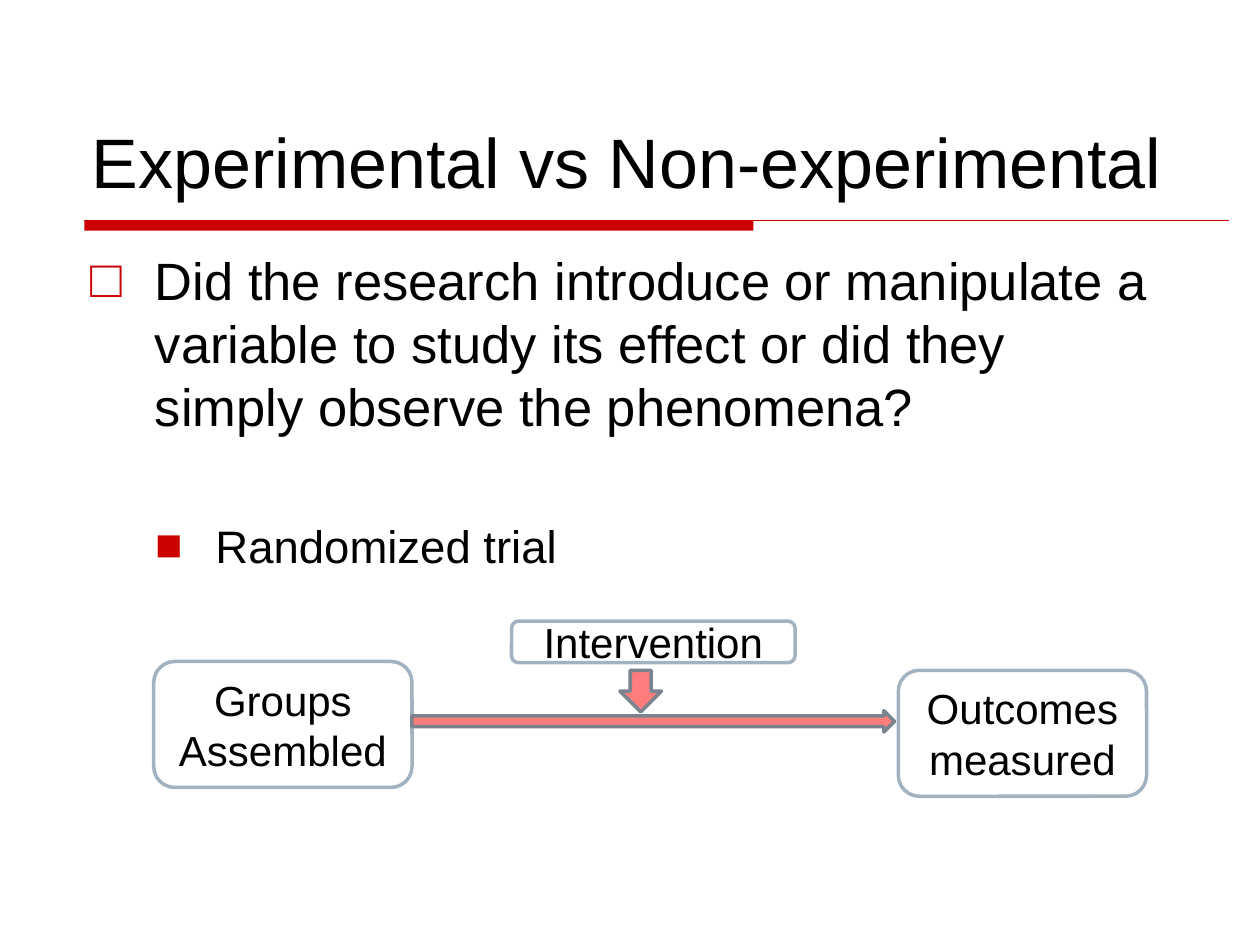
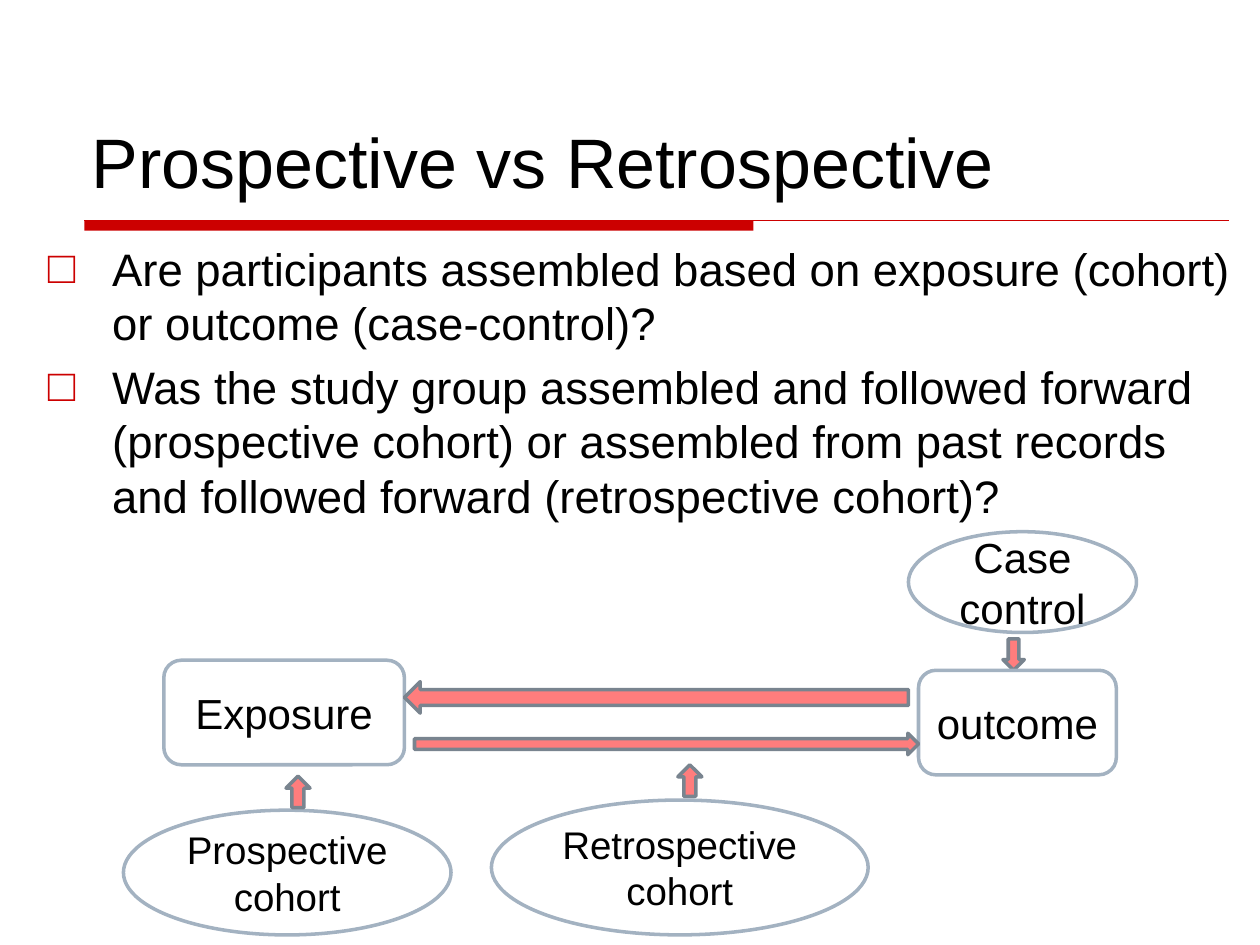
from lxml import etree
from pptx import Presentation, util as u
from pptx.dml.color import RGBColor
from pptx.enum import shapes, text
from pptx.oxml import ns

COLOURS = {
    "ink": "000000",
    "paper": "FFFFFF",
    "accent": "CC0000",
    "box line": "A3B2C1",
    "arrow": "FF7D7D",
    "arrow line": "79848F",
}
FONT = "Arial"
BULLETS = [("□", 0.51, 0.51), ("■", 0.99, 0.48)]
SHAPE = shapes.MSO_SHAPE


def colour(name):
    return RGBColor.from_string(COLOURS[name])


class StudyDeck:
    """Holds the deck's style and its current slide."""

    def __init__(self):
        self.deck = Presentation()
        self.deck.slide_width = u.Inches(10)
        self.deck.slide_height = u.Inches(7.5)
        self.page = None

    def new_page(self, title):
        self.page = self.deck.slides.add_slide(self.deck.slide_layouts[1])
        self.title_rule()
        box = self.page.shapes.title
        self.place(box, 0.63, 0.33, 8.75, 1.33)
        frame = box.text_frame
        frame.auto_size = text.MSO_AUTO_SIZE.NONE
        frame.vertical_anchor = text.MSO_ANCHOR.BOTTOM
        para = frame.paragraphs[0]
        para.alignment = text.PP_ALIGN.LEFT
        self.add_span(para, title, 40)

    def place(self, box, left, top, width, height):
        box.left, box.top = u.Inches(left), u.Inches(top)
        box.width, box.height = u.Inches(width), u.Inches(height)

    def add_span(self, para, words, size):
        span = para.add_run()
        span.text = words
        span.font.name = FONT
        span.font.size = u.Pt(size)
        span.font.color.rgb = colour("ink")

    def title_rule(self):
        line = self.page.shapes.add_connector(
            shapes.MSO_CONNECTOR.STRAIGHT,
            u.Inches(0.67), u.Inches(1.75), u.Inches(9.75), u.Inches(1.75))
        line.line.color.rgb = colour("accent")
        line.line.width = u.Pt(0.75)
        etree.SubElement(line._element.spPr, ns.qn("a:effectLst"))
        bar = self.shape(SHAPE.RECTANGLE, (0.67, 1.75, 5.31, 0.08), "accent")
        bar.line.fill.background()

    def bullet_list(self, area, items):
        box = self.page.placeholders[1]
        self.place(box, *area)
        frame = box.text_frame
        frame.auto_size = text.MSO_AUTO_SIZE.NONE
        for index, (level, words, size, gap) in enumerate(items):
            para = frame.add_paragraph() if index else frame.paragraphs[0]
            para.level = level
            para.space_before = u.Pt(gap)
            self.bullet(para, level)
            self.add_span(para, words, size)

    def bullet(self, para, level):
        mark, margin, hanging = BULLETS[level]
        properties = para._p.get_or_add_pPr()
        properties.set("marL", str(u.Inches(margin)))
        properties.set("indent", str(-u.Inches(hanging)))
        tint = etree.SubElement(properties, ns.qn("a:buClr"))
        etree.SubElement(tint, ns.qn("a:srgbClr"), val=COLOURS["accent"])
        etree.SubElement(properties, ns.qn("a:buFont"), typeface=FONT)
        etree.SubElement(properties, ns.qn("a:buChar"), char=mark)

    def shape(self, kind, area, fill, line=None):
        box = self.page.shapes.add_shape(kind, *map(u.Inches, area))
        box.shadow.inherit = False
        box.fill.solid()
        box.fill.fore_color.rgb = colour(fill)
        if line:
            box.line.color.rgb = colour(line)
            box.line.width = u.Pt(2)
        return box

    def label(self, words, area, kind=SHAPE.ROUNDED_RECTANGLE, size=24):
        box = self.shape(kind, area, "paper", "box line")
        frame = box.text_frame
        frame.word_wrap = True
        frame.vertical_anchor = text.MSO_ANCHOR.MIDDLE
        para = frame.paragraphs[0]
        para.alignment = text.PP_ALIGN.CENTER
        self.add_span(para, words, size)

    def arrow(self, kind, area, rotation=0):
        self.shape(kind, area, "arrow", "arrow line").rotation = rotation


def experimental_page(study):
    study.new_page("Experimental vs Non-experimental")
    study.bullet_list((0.62, 1.92, 8.75, 4.67), [
        (0, "Did the research introduce or manipulate a variable to study its "
            "effect or did they simply observe the phenomena?", 30, 0),
        (1, "Randomized trial", 26, 46),
    ])
    study.label("Groups Assembled", (1.22, 5.25, 2.05, 1))
    study.label("Outcomes measured", (7.13, 5.32, 1.97, 1))
    study.arrow(SHAPE.RIGHT_ARROW, (3.27, 5.64, 3.83, 0.17))
    study.arrow(SHAPE.DOWN_ARROW, (4.92, 5.32, 0.33, 0.33))
    study.label("Intervention", (4.06, 4.93, 2.25, 0.33))


def prospective_page(study):
    study.new_page("Prospective vs Retrospective")
    study.bullet_list((0.28, 1.86, 9.69, 4.92), [
        (0, "Are participants assembled based on exposure (cohort) or outcome "
            "(case-control)?", 26, 0),
        (0, "Was the study group assembled and followed forward (prospective "
            "cohort) or assembled from past records and followed forward "
            "(retrospective cohort)?", 26, 5.2),
    ])
    study.label("Exposure", (1.3, 5.24, 1.91, 0.83))
    study.label("Case control", (7.21, 4.22, 1.81, 0.8), SHAPE.OVAL)
    study.arrow(SHAPE.DOWN_ARROW, (7.96, 5.07, 0.17, 0.25))
    study.label("outcome", (7.29, 5.32, 1.57, 0.83))
    study.arrow(SHAPE.RIGHT_ARROW, (3.21, 5.41, 4, 0.25), 180)
    study.arrow(SHAPE.RIGHT_ARROW, (3.29, 5.82, 4, 0.17))
    study.label("Prospective cohort", (0.98, 6.43, 2.6, 0.99), SHAPE.OVAL, 22)
    study.arrow(SHAPE.UP_ARROW, (2.27, 6.16, 0.19, 0.25))
    study.label("Retrospective cohort", (3.9, 6.35, 2.99, 1.07), SHAPE.OVAL, 22)
    study.arrow(SHAPE.UP_ARROW, (5.38, 6.07, 0.19, 0.25))


def main():
    study = StudyDeck()
    experimental_page(study)
    prospective_page(study)
    study.deck.save("out.pptx")


if __name__ == "__main__":
    main()
